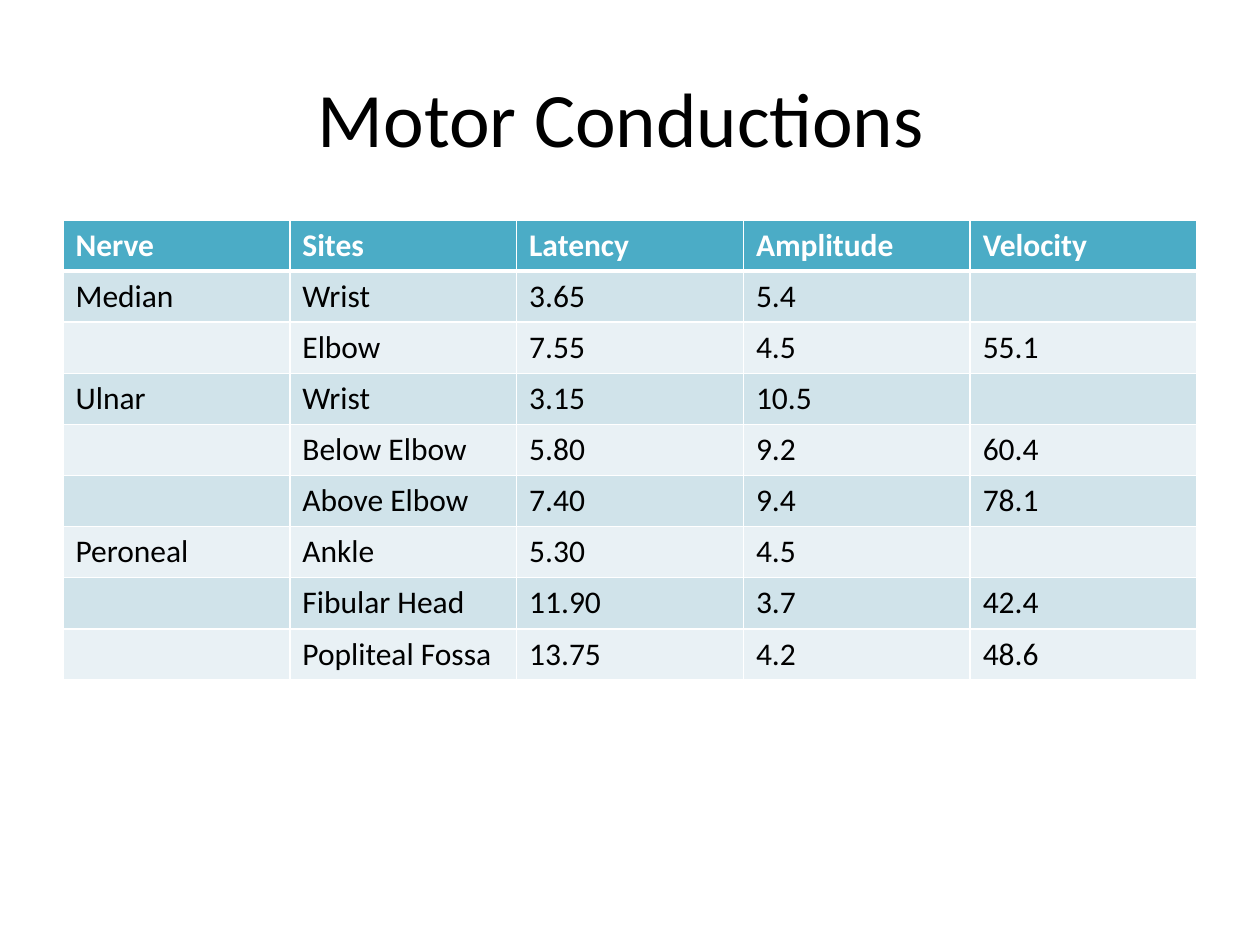
import dataclasses

import lxml.etree
import pptx
import pptx.dml.color
import pptx.enum.text
import pptx.oxml.ns
import pptx.presentation
import pptx.slide
import pptx.table
import pptx.util

PX = 914400 / 126
FONT = "Calibri"
BLACK = pptx.dml.color.RGBColor(0x00, 0x00, 0x00)
WHITE = pptx.dml.color.RGBColor(0xFF, 0xFF, 0xFF)
TEAL = pptx.dml.color.RGBColor(0x4B, 0xAC, 0xC6)
BAND_DARK = pptx.dml.color.RGBColor(0xD0, 0xE3, 0xEA)
BAND_LIGHT = pptx.dml.color.RGBColor(0xE9, 0xF1, 0xF5)


@dataclasses.dataclass(frozen=True)
class Conduction:
    nerve: str
    site: str
    latency: str
    amplitude: str
    velocity: str


@dataclasses.dataclass(frozen=True)
class RowStyle:
    fill: pptx.dml.color.RGBColor
    color: pptx.dml.color.RGBColor = BLACK
    bold: bool = False
    top: int = 1
    bottom: int = 1


HEADER = Conduction("Nerve", "Sites", "Latency", "Amplitude", "Velocity")
CONDUCTIONS = [
    Conduction("Median", "Wrist", "3.65", "5.4", ""),
    Conduction("", "Elbow", "7.55", "4.5", "55.1"),
    Conduction("Ulnar", "Wrist", "3.15", "10.5", ""),
    Conduction("", "Below Elbow", "5.80", "9.2", "60.4"),
    Conduction("", "Above Elbow", "7.40", "9.4", "78.1"),
    Conduction("Peroneal", "Ankle", "5.30", "4.5", ""),
    Conduction("", "Fibular Head", "11.90", "3.7", "42.4"),
    Conduction("", "Popliteal Fossa", "13.75", "4.2", "48.6"),
]


def px(n: int) -> pptx.util.Emu:
    return pptx.util.Emu(round(n * PX))


def format_paragraph(p, size: int, color: pptx.dml.color.RGBColor, bold: bool = False) -> None:
    p.font.name = FONT
    p.font.size = pptx.util.Pt(size)
    p.font.color.rgb = color
    p.font.bold = bold


def add_title(s: pptx.slide.Slide, text: str) -> None:
    sp = s.shapes.title
    sp.left, sp.top, sp.width, sp.height = px(63), px(38), px(1134), px(158)
    tf = sp.text_frame
    tf.text = text
    tf.vertical_anchor = pptx.enum.text.MSO_ANCHOR.MIDDLE
    p = tf.paragraphs[0]
    p.alignment = pptx.enum.text.PP_ALIGN.CENTER
    format_paragraph(p, 44, BLACK)


def set_borders(cell: pptx.table._Cell, style: RowStyle) -> None:
    qn = pptx.oxml.ns.qn
    props = cell._tc.get_or_add_tcPr()
    for side, points in (("L", 1), ("R", 1), ("T", style.top), ("B", style.bottom)):
        line = lxml.etree.SubElement(props, qn(f"a:ln{side}"), w=str(pptx.util.Pt(points)))
        fill = lxml.etree.SubElement(line, qn("a:solidFill"))
        lxml.etree.SubElement(fill, qn("a:srgbClr"), val=str(WHITE))


def fill_cell(cell: pptx.table._Cell, text: str, style: RowStyle) -> None:
    set_borders(cell, style)
    cell.fill.solid()
    cell.fill.fore_color.rgb = style.fill
    cell.text = text
    format_paragraph(cell.text_frame.paragraphs[0], 18, style.color, style.bold)


def row_style(index: int) -> RowStyle:
    if index == 0:
        return RowStyle(TEAL, WHITE, bold=True, bottom=3)
    return RowStyle(BAND_DARK if index % 2 else BAND_LIGHT, top=3 if index == 1 else 1)


def add_conduction_table(s: pptx.slide.Slide, records: list[Conduction]) -> None:
    columns = len(dataclasses.fields(Conduction))
    table = s.shapes.add_table(
        len(records), columns, px(63), px(220), px(1134), px(51 * len(records))
    ).table
    for i, record in enumerate(records):
        for j, text in enumerate(dataclasses.astuple(record)):
            fill_cell(table.cell(i, j), text, row_style(i))


def build() -> pptx.presentation.Presentation:
    prs = pptx.Presentation()
    prs.slide_width, prs.slide_height = px(1260), px(945)
    s = prs.slides.add_slide(prs.slide_layouts[5])
    add_title(s, "Motor Conductions ")
    add_conduction_table(s, [HEADER, *CONDUCTIONS])
    return prs


if __name__ == "__main__":
    build().save("out.pptx")
